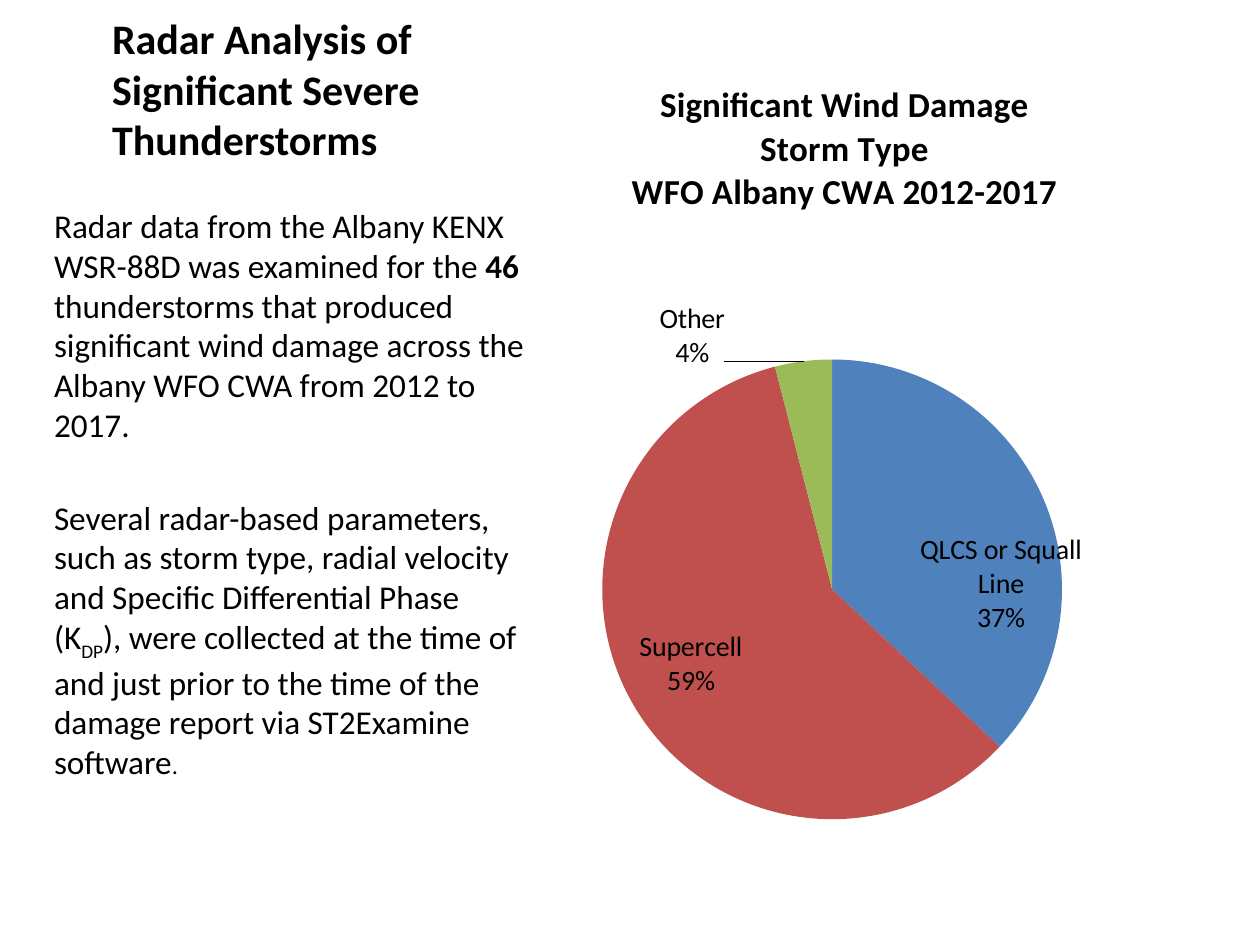
from lxml import etree
from pptx import Presentation
from pptx.chart.data import CategoryChartData
from pptx.dml.color import RGBColor
from pptx.enum.chart import XL_CHART_TYPE as ChartType, XL_LABEL_POSITION as LabelPos
from pptx.enum.text import MSO_ANCHOR as Anchor, PP_ALIGN as Align
from pptx.oxml.ns import qn
from pptx.util import Cm, Pt

FONT = "Calibri"
BLACK = "000000"


def color(hex_code):
    return RGBColor.from_string(hex_code)


def style_font(font, size, bold=False):
    font.name = FONT
    font.size = Pt(size)
    font.bold = bold
    font.color.rgb = color(BLACK)


def add_run(paragraph, text, size, bold=False, baseline=None):
    run = paragraph.add_run()
    run.text = text
    style_font(run.font, size, bold)
    if baseline is not None:
        run.font._element.set("baseline", str(baseline))


def add_text(slide, left, top, width, height, paragraphs, anchor=Anchor.TOP, gap=0):
    """Add a wrapped text box; each paragraph is a list of add_run arguments."""
    frame = slide.shapes.add_textbox(Cm(left), Cm(top), Cm(width), Cm(height)).text_frame
    frame.word_wrap = True
    frame.vertical_anchor = anchor
    for index, runs in enumerate(paragraphs):
        paragraph = frame.paragraphs[0] if index == 0 else frame.add_paragraph()
        paragraph.space_before = Pt(gap if index else 0)
        for run in runs:
            add_run(paragraph, *run)


def make_layout(target=None, **values):
    """Build a manual chart layout from fractions of the chart size."""
    layout = etree.Element(qn("c:layout"))
    manual = etree.SubElement(layout, qn("c:manualLayout"))
    settings = {"layoutTarget": target} if target else {}
    if target or "edge" in values:
        values.pop("edge", None)
        settings.update(xMode="edge", yMode="edge")
    for tag, value in {**settings, **values}.items():
        etree.SubElement(manual, qn(f"c:{tag}"), val=str(value))
    return layout


def set_layout(parent, layout, after=None):
    for old in parent.findall(qn("c:layout")):
        parent.remove(old)
    if after is None:
        parent.insert(0, layout)
    else:
        parent.find(qn(after)).addnext(layout)


def add_chart_title(chart, lines):
    frame = chart.chart_title.text_frame
    for index, line in enumerate(lines):
        paragraph = frame.paragraphs[0] if index == 0 else frame.add_paragraph()
        paragraph.alignment = Align.CENTER
        add_run(paragraph, line, 20, True)
    title = chart.chart_title._element
    set_layout(title, make_layout(edge=True, x=0.19, y=0.03), "c:tx")


def place_label(point, position, dx, dy, lines=()):
    """Shift one slice label, with its own wording if lines are given."""
    label = point.data_label
    if lines:
        frame = label.text_frame
        for index, line in enumerate(lines):
            paragraph = frame.paragraphs[0] if index == 0 else frame.add_paragraph()
            add_run(paragraph, line, 16)
    else:
        style_font(label.font, 16)
    label.position = position
    element = label._dLbl
    for tag, shown in (("Val", 0), ("CatName", 1), ("Percent", 1)):
        element.find(qn(f"c:show{tag}")).set("val", str(shown))
    separator = etree.Element(qn("c:separator"))
    separator.text = "\n"
    element.find(qn("c:showBubbleSize")).addnext(separator)
    set_layout(element, make_layout(x=dx, y=dy), "c:idx")


def add_storm_pie(slide):
    storm_data = CategoryChartData()
    storm_data.categories = ["QLCS/Squall Line", "Supercell", "Other"]
    storm_data.add_series("Series 1", (37, 59, 4))
    chart = slide.shapes.add_chart(
        ChartType.PIE, Cm(9.96), Cm(1.07), Cm(14.2), Cm(16.26), storm_data).chart
    chart.has_legend = False
    style_font(chart.font, 10)
    add_chart_title(chart, ["Significant Wind Damage", "Storm Type",
                            "WFO Albany CWA 2012-2017"])

    # Slices
    pie = chart.plots[0]
    pie.vary_by_categories = True
    storms = pie.series[0]
    for index, fill_color in enumerate(("4F81BD", "C0504D", "9BBB59")):
        fill = storms.points[index].format.fill
        fill.solid()
        fill.fore_color.rgb = color(fill_color)
    plot_area = chart._chartSpace.chart.plotArea
    set_layout(plot_area, make_layout("inner", x=0.15, y=0.38, w=0.66, h=0.57))

    # Labels
    labels = storms.data_labels
    style_font(labels.font, 16)
    labels.show_value = False
    labels.show_category_name = True
    labels.show_percentage = True
    place_label(storms.points[0], LabelPos.CENTER, 0.09, 0.05,
                ["QLCS or Squall Line", "37%"])
    place_label(storms.points[1], LabelPos.CENTER, -0.06, 0.02)
    place_label(storms.points[2], LabelPos.OUTSIDE_END, -0.11, 0.02)
    leader = labels._element.find(qn("c:showLeaderLines"))
    if leader is None:
        leader = etree.SubElement(labels._element, qn("c:showLeaderLines"))
    leader.set("val", "1")


def main():
    prs = Presentation()
    prs.slide_width, prs.slide_height = Cm(25.4), Cm(19.05)
    slide = prs.slides.add_slide(prs.slide_layouts[6])

    # Heading
    add_text(slide, 2.01, 0.2, 8.36, 3.23,
             [[("Radar Analysis of Significant Severe Thunderstorms", 24, True)]],
             Anchor.BOTTOM)

    # Method description
    add_text(slide, 0.84, 4.01, 10.16, 11.25, [
        [("Radar data from the Albany KENX WSR-88D was examined for the ", 19),
         ("46", 19, True),
         (" thunderstorms that produced significant wind damage across the "
          "Albany WFO CWA from 2012 to 2017.", 19)],
        [("Several radar-based parameters, such as storm type, radial velocity "
          "and Specific Differential Phase (K", 19),
         ("DP", 19, False, -25000),
         ("), were collected at the time of and just prior to the time of the "
          "damage report via ST2Examine software", 19),
         (".", 14)],
    ], gap=30)

    # Storm type shares
    add_storm_pie(slide)
    prs.save("out.pptx")


if __name__ == "__main__":
    main()
